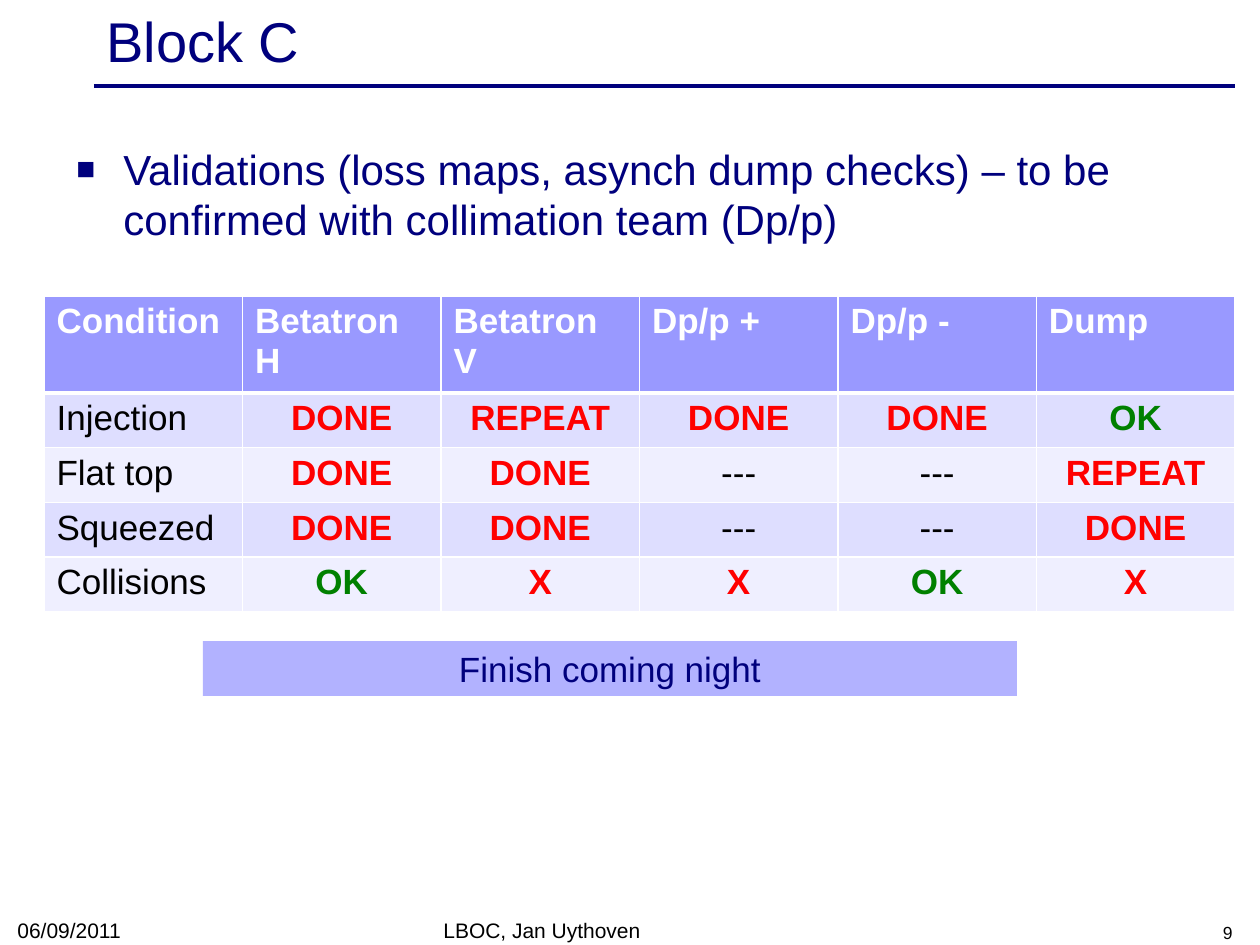
import pptx
import pptx.dml.color
import pptx.enum.shapes
import pptx.enum.text
import pptx.oxml
import pptx.oxml.ns
import pptx.util

EMU_PER_PX = 914400 / 126
NAVY, BLACK, WHITE, RED, GREEN = "00007D", "000000", "FFFFFF", "FF0000", "008000"
HEADER_FILL, BAND_FILLS, NOTE_FILL = "9999FF", ("DEDEFF", "EFEFFF"), "B2B2FF"
ALIGN = pptx.enum.text.PP_ALIGN
ANCHOR = pptx.enum.text.MSO_ANCHOR

STATUS_COLORS = {"DONE": RED, "REPEAT": RED, "X": RED, "OK": GREEN}
ROWS = [
    ["Condition", "Betatron H", "Betatron V", "Dp/p +", "Dp/p -", "Dump"],
    ["Injection", "DONE", "REPEAT", "DONE", "DONE", "OK"],
    ["Flat top", "DONE", "DONE", "---", "---", "REPEAT"],
    ["Squeezed", "DONE", "DONE", "---", "---", "DONE"],
    ["Collisions", "OK", "X", "X", "OK", "X"],
]


def px(length):
    return pptx.util.Emu(round(length * EMU_PER_PX))


def color(value):
    return pptx.dml.color.RGBColor.from_string(value)


def xml(tag, content="", **attributes):
    """Make one DrawingML element."""
    listed = "".join(f' {name}="{value}"' for name, value in attributes.items())
    return pptx.oxml.parse_xml(
        f'<a:{tag} {pptx.oxml.ns.nsdecls("a")}{listed}>{content}</a:{tag}>'
    )


def write(frame, text, size, text_color, align=ALIGN.LEFT, bold=False):
    """Put one formatted run in the frame and return its paragraph."""
    paragraph = frame.paragraphs[0]
    paragraph.alignment = align
    run = paragraph.add_run()
    run.text = text
    formats = {"name": "Arial", "size": pptx.util.Pt(size), "bold": bold}
    for name, value in formats.items():
        setattr(run.font, name, value)
    run.font.color.rgb = color(text_color)
    return paragraph


def add_text(slide, box, text, size, text_color, align=ALIGN.LEFT, anchor=ANCHOR.TOP):
    frame = slide.shapes.add_textbox(*map(px, box)).text_frame
    frame.word_wrap = True
    frame.vertical_anchor = anchor
    return write(frame, text, size, text_color, align)


def add_title(slide, box):
    left, top, width, height = box
    rule_y = top + 82
    rule = slide.shapes.add_connector(
        pptx.enum.shapes.MSO_CONNECTOR.STRAIGHT,
        px(left), px(rule_y), px(left + width), px(rule_y),
    )
    rule.line.color.rgb = color(NAVY)
    rule.line.width = pptx.util.Pt(2)
    rule._element.spPr.append(xml("effectLst"))
    add_text(slide, box, "Block C", 32, NAVY, anchor=ANCHOR.MIDDLE)


def add_bullet(slide, box):
    text = ("Validations (loss maps, asynch dump checks) – "
            "to be confirmed with collimation team (Dp/p)")
    paragraph = add_text(slide, box, text, 24, NAVY)
    properties = paragraph._p.get_or_add_pPr()
    properties.set("marL", str(px(47)))
    properties.set("indent", str(-px(47)))
    properties.append(xml("buClr", f'<a:srgbClr val="{NAVY}"/>'))
    properties.append(xml("buSzPct", val=75000))
    properties.append(xml("buFont", typeface="Arial"))
    properties.append(xml("buChar", char="■"))


def set_borders(cell, widths):
    """Draw white borders; widths are points for left, right, top and bottom."""
    properties = cell._tc.get_or_add_tcPr()
    fill = f'<a:solidFill><a:srgbClr val="{WHITE}"/></a:solidFill>'
    for index, (side, width) in enumerate(zip("LRTB", widths)):
        properties.insert(index, xml(f"ln{side}", fill, w=pptx.util.Pt(width)))


def add_status_table(slide, box, header_height):
    left, top, width, height = box
    table = slide.shapes.add_table(len(ROWS), len(ROWS[0]), *map(px, box)).table
    for row in table.rows:
        row.height = px((height - header_height) / (len(ROWS) - 1))
    table.rows[0].height = px(header_height)
    for row_index, texts in enumerate(ROWS):
        header = row_index == 0
        fill = HEADER_FILL if header else BAND_FILLS[(row_index - 1) % 2]
        for column_index, text in enumerate(texts):
            cell = table.cell(row_index, column_index)
            cell.fill.solid()
            cell.fill.fore_color.rgb = color(fill)
            set_borders(cell, (1, 1, 3 if row_index == 1 else 1, 3 if header else 1))
            align = ALIGN.LEFT if header or column_index == 0 else ALIGN.CENTER
            text_color = WHITE if header else STATUS_COLORS.get(text, BLACK)
            write(cell.text_frame, text, 20, text_color, align, text_color != BLACK)


def add_note(slide, box):
    note = slide.shapes.add_shape(pptx.enum.shapes.MSO_SHAPE.RECTANGLE, *map(px, box))
    note.shadow.inherit = False
    note.fill.solid()
    note.fill.fore_color.rgb = color(NOTE_FILL)
    note.line.fill.background()
    note.text_frame.vertical_anchor = ANCHOR.MIDDLE
    write(note.text_frame, "Finish coming night", 20, NAVY, ALIGN.CENTER)


def add_footer(slide, box):
    left, top, width, height = box
    parts = [
        (0, 294, "06/09/2011", 12, ALIGN.LEFT),
        (426, 400, "LBOC, Jan Uythoven", 12, ALIGN.LEFT),
        (width - 294, 294, "9", 10, ALIGN.RIGHT),
    ]
    for offset, part_width, text, size, align in parts:
        part_box = (left + offset, top, part_width, height)
        add_text(slide, part_box, text, size, BLACK, align, ANCHOR.BOTTOM)


def main():
    presentation = pptx.Presentation()
    presentation.slide_width, presentation.slide_height = px(1260), px(945)
    slide = presentation.slides.add_slide(presentation.slide_layouts[6])
    add_title(slide, (94, 4, 1141, 72))
    add_bullet(slide, (64, 137, 1152, 179))
    add_status_table(slide, (44, 296, 1191, 315), 97)
    add_note(slide, (203, 641, 814, 55))
    add_footer(slide, (5, 913, 1240, 36))
    presentation.save("out.pptx")


if __name__ == "__main__":
    main()
